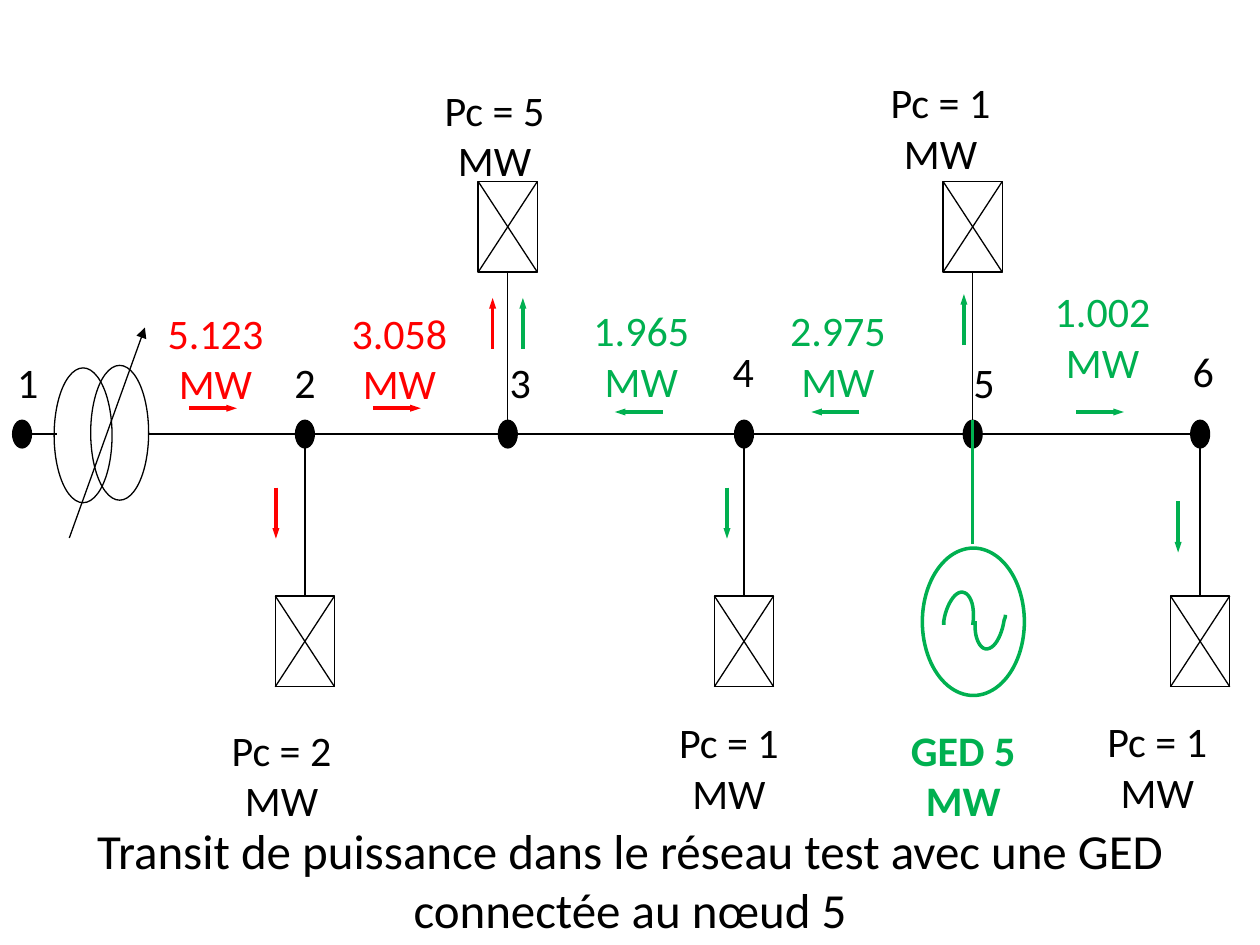
from lxml import etree
from pptx import Presentation
from pptx import util as u
from pptx.dml.color import RGBColor
from pptx.enum import shapes, text
from pptx.oxml.ns import qn

COLORS = {"black": "000000", "white": "FFFFFF", "red": "FF0000", "green": "00B050"}
FONT = "Calibri"

# All lengths are cells of a 100 x 75 grid
COLS = 100
BUS_Y, NODE_W, NODE_H = 34.45, 1.5, 2.2
BOX_W, BOX_H = 4.7, 7.2
BOX_TOP = {"up": 14.4, "down": 47.3}

# Nodes: name, centre, label top, load side, load text, load text left and top
NODES = [
    ("1", 1.75, 28.3, None, None, None),
    ("2", 24.2, 28.3, "down", "Pc = 2 MW", (17.3, 57.5)),
    ("3", 40.3, 28.3, "up", "Pc = 5 MW", (34.2, 6.7)),
    ("4", 59.05, 27.4, "down", "Pc = 1 MW", (52.8, 56.9)),
    ("5", 77.2, 28.3, "up", "Pc = 1 MW", (69.6, 6.1)),
    ("6", 95.25, 27.4, "down", "Pc = 1 MW", (86.8, 56.8)),
]
LABEL_X = {"1": 1, "2": 23, "3": 40.1, "4": 57.8, "5": 76.9, "6": 94.3}

# Flows on the bus: text, text left and top, arrow row, direction, colour
FLOWS = [
    ("5.123 MW", 11.5, 24.4, 32.4, 1, "red"),
    ("3.058 MW", 26.1, 24.4, 32.4, 1, "red"),
    ("1.965 MW", 45.3, 24.2, 32.7, -1, "green"),
    ("2.975 MW", 60.9, 24.2, 32.7, -1, "green"),
    ("1.002 MW", 81.9, 22.7, 32.7, 1, "green"),
]
FLOW_W, FLOW_LEN = 11.2, 3.8

# Flows to the loads: column, start row, direction, colour
LOAD_FLOWS = [
    (21.9, 38.7, 1, "red"), (57.7, 38.7, 1, "green"), (93.5, 39.8, 1, "green"),
    (39.1, 27.7, -1, "red"), (41.5, 27.7, -1, "green"), (76.5, 27.4, -1, "green"),
]
LOAD_FLOW_LEN = 4.05

# Generator wave: start point, then cubic curves (two controls and an end)
WAVES = [
    ((74.9, 49.6), [((74.9, 49.5), (74.9, 49.4), (74.9, 49.3)),
                    ((75.1, 48), (75.8, 46.9), (76.4, 47)),
                    ((77.1, 47.1), (77.4, 48.3), (77.2, 49.6))]),
    ((77.4, 49.3), [((77.3, 50.5), (77.7, 51.4), (78.2, 51.5)),
                    ((78.9, 51.6), (79.5, 50.5), (79.7, 49.2)),
                    ((79.8, 49), (79.8, 48.9), (79.8, 48.8))]),
]
CAPTION = "Transit de puissance dans le réseau test avec une GED connectée au nœud 5"

prs = Presentation()
prs.slide_width, prs.slide_height = u.Inches(10), u.Inches(7.5)
s = prs.slides.add_slide(prs.slide_layouts[6])


def grid(*cells):
    return [round(c * prs.slide_width / COLS) for c in cells]


def rgb(name):
    return RGBColor.from_string(COLORS[name])


def style(sp, fill=None, line="black", width=0.75):
    sp.shadow.inherit = False
    if fill:
        sp.fill.solid()
        sp.fill.fore_color.rgb = rgb(fill)
    else:
        sp.fill.background()
    sp.line.color.rgb = rgb(line)
    sp.line.width = u.Pt(width)
    return sp


def add_shape(kind, x, y, w, h, **fmt):
    return style(s.shapes.add_shape(kind, *grid(x, y, w, h)), **fmt)


def add_line(x1, y1, x2, y2, color="black", width=0.75, head=None):
    c = s.shapes.add_connector(shapes.MSO_CONNECTOR.STRAIGHT, *grid(x1, y1, x2, y2))
    c.line.color.rgb = rgb(color)
    c.line.width = u.Pt(width)
    if head:
        etree.SubElement(c.line._get_or_add_ln(), qn("a:tailEnd"), type="triangle", w=head)
    etree.SubElement(c._element.spPr, qn("a:effectLst"))
    return c


def add_text(content, x, y, w, h, size=24, color="black", bold=False, inset=0,
             anchor=text.MSO_ANCHOR.TOP):
    tf = s.shapes.add_textbox(*grid(x, y, w, h)).text_frame
    tf.word_wrap = True
    tf.vertical_anchor = anchor
    tf.margin_left = tf.margin_right = u.Inches(inset)
    tf.margin_top = tf.margin_bottom = u.Inches(inset / 2)
    p = tf.paragraphs[0]
    p.alignment = text.PP_ALIGN.CENTER
    r = p.add_run()
    r.text = content
    r.font.name, r.font.size, r.font.bold = FONT, u.Pt(size), bold
    r.font.color.rgb = rgb(color)


def add_wave(start, curves, steps=12):
    points, p0 = [], start
    for p1, p2, p3 in curves:
        for i in range(1, steps + 1):
            t = i / steps
            points.append(grid(*[
                (1 - t) ** 3 * a + 3 * (1 - t) ** 2 * t * b + 3 * (1 - t) * t ** 2 * c + t ** 3 * d
                for a, b, c, d in zip(p0, p1, p2, p3)]))
        p0 = p3
    fb = s.shapes.build_freeform(*grid(*start))
    fb.add_line_segments(points, close=False)
    style(fb.convert_to_shape(), line="green", width=2)


def add_load(x, side):
    left, top = x - BOX_W / 2, BOX_TOP[side]
    right, bottom = left + BOX_W, top + BOX_H
    box = add_shape(shapes.MSO_SHAPE.RECTANGLE, left, top, BOX_W, BOX_H, fill="white")
    add_line(left, top, right, bottom)
    add_line(left, bottom, right, top)
    down = side == "down"
    feeder = add_line(x, BUS_Y + (NODE_H / 2 if down else -NODE_H / 2),
                      x, top if down else bottom)
    feeder.end_connect(box, 0 if down else 2)


# Transformer with its regulator arrow
OVAL = shapes.MSO_SHAPE.OVAL
for x, y in ((7.2, 29), (4.3, 29.2)):
    add_shape(OVAL, x, y, 4.6, 10.7)
add_line(5.5, 42.7, 11.5, 26, head="med")

# Bus, nodes and loads
add_line(1.8, BUS_Y, 4.5, BUS_Y, width=1)
add_line(11.8, BUS_Y, 96, BUS_Y, width=1)
for name, x, label_y, side, load, load_at in NODES:
    add_shape(OVAL, x - NODE_W / 2, BUS_Y - NODE_H / 2, NODE_W, NODE_H, fill="black")
    add_text(name, LABEL_X[name], label_y, 2.4, 5)
    if side:
        add_load(x, side)
        add_text(load, *load_at, 10.1, 5)

# Power flows
for label, x, y, row, way, color in FLOWS:
    mid, half = x + 5.4, way * FLOW_LEN / 2
    add_line(mid - half, row, mid + half, row, color=color, width=2, head="sm")
    add_text(label, x, y, FLOW_W, 8.4, color=color)
for x, y, way, color in LOAD_FLOWS:
    add_line(x, y, x, y + way * LOAD_FLOW_LEN, color=color, width=2, head="sm")

# Generator at node 5
add_shape(OVAL, 73.2, 43.5, 8.1, 11.7, fill="white", line="green", width=2)
add_line(77.2, 33.3, 77.2, 43.2, color="green", width=2)
for wave in WAVES:
    add_wave(*wave)
add_text("GED 5 MW", 70.3, 57.5, 12.3, 5, color="green", bold=True)

# Caption
add_text(CAPTION, 0, 64.6, COLS, 10.4, size=28, inset=0.1, anchor=text.MSO_ANCHOR.MIDDLE)

prs.save("out.pptx")
